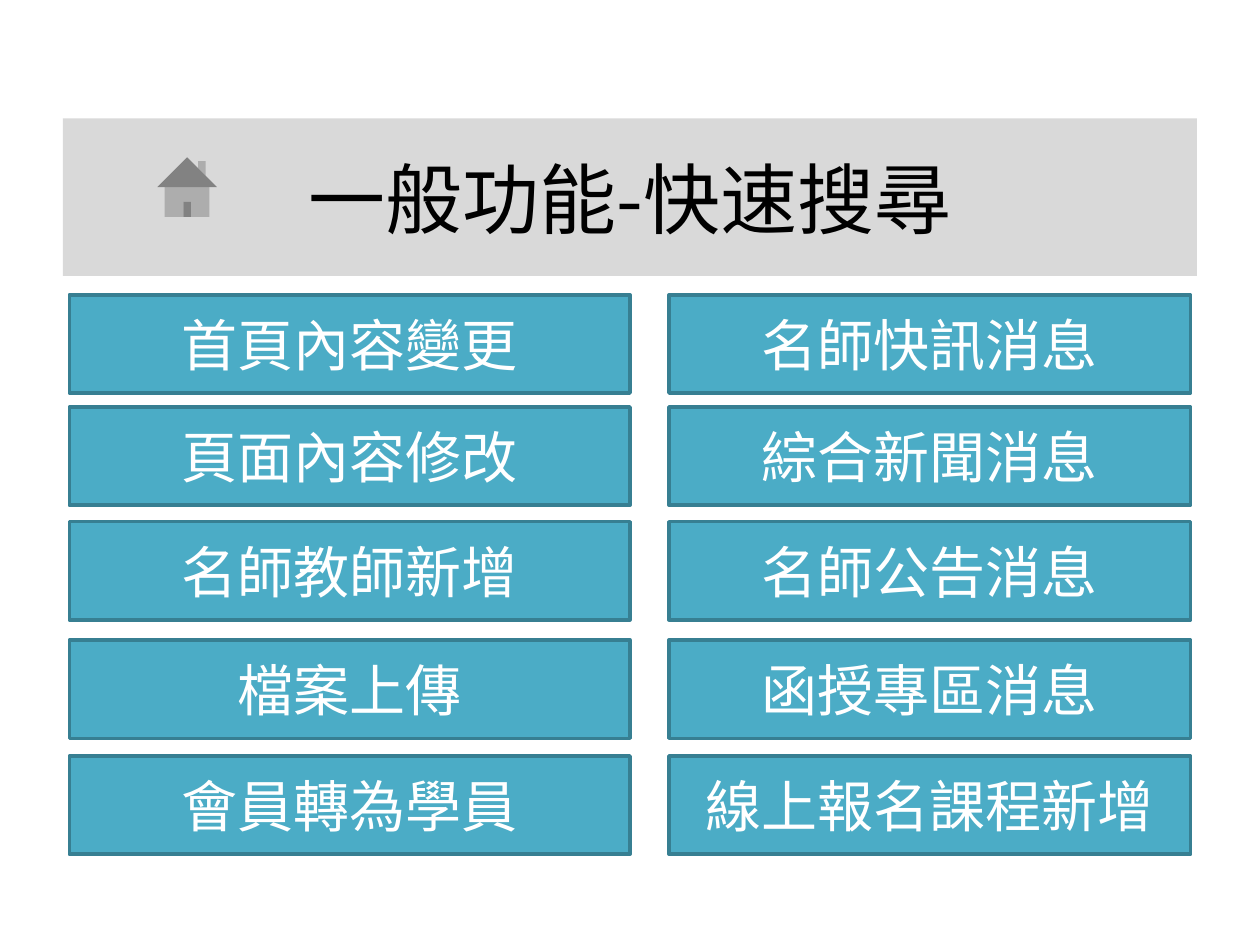
from lxml import etree
from pptx import Presentation
from pptx.dml.color import RGBColor
from pptx.enum.shapes import MSO_SHAPE
from pptx.enum.text import MSO_ANCHOR, PP_ALIGN
from pptx.oxml.ns import qn
from pptx.util import Inches, Pt

RECT = MSO_SHAPE.RECTANGLE
HOME = MSO_SHAPE.ACTION_BUTTON_HOME
MIDDLE = MSO_ANCHOR.MIDDLE
CENTER = PP_ALIGN.CENTER

GRAY = RGBColor(0xD9, 0xD9, 0xD9)
TEAL = RGBColor(0x4B, 0xAC, 0xC6)
DARK_TEAL = RGBColor(0x37, 0x7F, 0x92)
BLACK = RGBColor(0, 0, 0)
WHITE = RGBColor(0xFF, 0xFF, 0xFF)
FONT = "Noto Sans CJK SC"

ROW_TOPS = [2.34, 3.23, 4.14, 5.08, 6]
BUTTON_HEIGHT = 0.78
COLUMNS = [
    (0.55, 4.45, ["首頁內容變更", "頁面內容修改", "名師教師新增", "檔案上傳", "會員轉為學員"]),
    (5.31, 4.14, ["名師快訊消息", "綜合新聞消息", "名師公告消息", "函授專區消息", "線上報名課程新增"]),
]

prs = Presentation()
prs.slide_width = Inches(10)
prs.slide_height = Inches(7.5)
slide = prs.slides.add_slide(prs.slide_layouts[6])


def add_filled(kind, left, top, width, height, color):
    s = slide.shapes.add_shape(kind, Inches(left), Inches(top), Inches(width), Inches(height))
    s.shadow.inherit = False
    s.fill.solid()
    s.fill.fore_color.rgb = color
    s.line.fill.background()
    return s


def set_label(s, text, size, color):
    """Centre the text and set its font for Latin and East Asian letters."""
    tf = s.text_frame
    tf.text = text
    tf.word_wrap = True
    tf.vertical_anchor = MIDDLE
    p = tf.paragraphs[0]
    p.alignment = CENTER
    r = p.runs[0]
    r.font.size = Pt(size)
    r.font.color.rgb = color
    r.font.name = FONT
    etree.SubElement(r.font._element, qn("a:ea"), typeface=FONT)


title = add_filled(RECT, 0.5, 0.94, 9, 1.25, GRAY)
set_label(title, "一般功能-快速搜尋", 44, BLACK)

for left, width, labels in COLUMNS:
    for top, label in zip(ROW_TOPS, labels):
        button = add_filled(RECT, left, top, width, BUTTON_HEIGHT, TEAL)
        button.line.color.rgb = DARK_TEAL
        button.line.width = Pt(2)
        set_label(button, label, 32, WHITE)

add_filled(HOME, 1.17, 1.17, 0.63, 0.63, GRAY)

prs.save("out.pptx")
